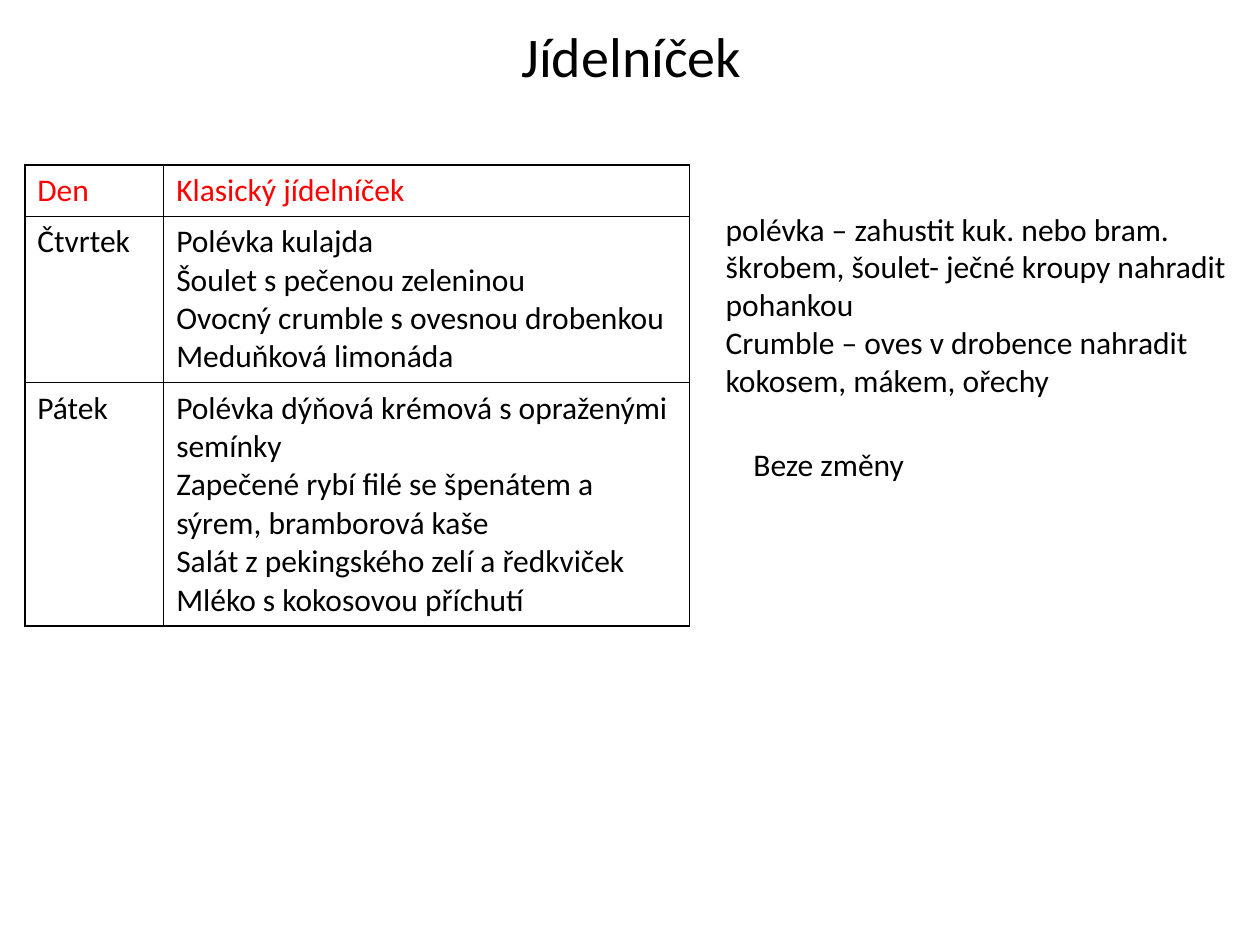
import pptx
import pptx.util
import pptx.dml.color
import pptx.enum.text
import pptx.oxml
import pptx.oxml.ns
from pptx.util import Cm

COLORS = {"text": "000000", "header": "FF0000", "border": "000000"}
MENU = [
    ("Den", "Klasický jídelníček"),
    ("Čtvrtek", "Polévka kulajda\nŠoulet s pečenou zeleninou\n"
                "Ovocný crumble s ovesnou drobenkou\nMeduňková limonáda"),
    ("Pátek", "Polévka dýňová krémová s opraženými semínky\n"
              "Zapečené rybí filé se špenátem a sýrem, bramborová kaše\n"
              "Salát z pekingského zelí a ředkviček\nMléko s kokosovou příchutí"),
]
SOUP_NOTE = ("polévka – zahustit kuk. nebo bram. škrobem, šoulet- ječné kroupy "
             "nahradit pohankou\n"
             "Crumble – oves v drobence nahradit kokosem, mákem, ořechy")


class MenuSlide:
    """Holds the style and the current slide, and adds its elements."""

    def __init__(self, s, font="Calibri", size=18):
        self.s, self.font, self.size = s, font, size

    def style(self, tf, color="text", size=None):
        for p in tf.paragraphs:
            for r in p.runs:
                r.font.name = self.font
                r.font.size = pptx.util.Pt(size or self.size)
                r.font.color.rgb = pptx.dml.color.RGBColor.from_string(COLORS[color])

    def title(self, text, left, top, width, height):
        sp = self.s.shapes.title
        sp.left, sp.top, sp.width, sp.height = left, top, width, height
        tf = sp.text_frame
        tf.text = text
        tf.vertical_anchor = pptx.enum.text.MSO_ANCHOR.MIDDLE
        tf.paragraphs[0].alignment = pptx.enum.text.PP_ALIGN.CENTER
        self.style(tf, size=32)

    def text(self, text, left, top, width, height):
        tf = self.s.shapes.add_textbox(left, top, width, height).text_frame
        tf.word_wrap = True
        tf.auto_size = pptx.enum.text.MSO_AUTO_SIZE.SHAPE_TO_FIT_TEXT
        tf.text = text
        self.style(tf)

    def border(self, cell):
        tcPr = cell._tc.get_or_add_tcPr()
        for i, side in enumerate(("lnL", "lnR", "lnT", "lnB")):
            ln = pptx.oxml.parse_xml(
                f'<a:{side} {pptx.oxml.ns.nsdecls("a")} w="12700"><a:solidFill>'
                f'<a:srgbClr val="{COLORS["border"]}"/></a:solidFill></a:{side}>')
            tcPr.insert(i, ln)

    def table(self, rows, left, top, widths, heights):
        table = self.s.shapes.add_table(
            len(rows), len(widths), left, top, sum(widths), sum(heights)).table
        table.first_row = table.horz_banding = False
        for column, width in zip(table.columns, widths):
            column.width = width
        for i, (row, height) in enumerate(zip(rows, heights)):
            table.rows[i].height = height
            for j, text in enumerate(row):
                cell = table.cell(i, j)
                cell.text_frame.text = text
                cell.fill.background()
                self.style(cell.text_frame, "text" if i else "header")
                self.border(cell)


def main():
    prs = pptx.Presentation()
    prs.slide_width, prs.slide_height = Cm(25.4), Cm(19.05)
    slide = MenuSlide(prs.slides.add_slide(prs.slide_layouts[5]))
    slide.title("Jídelníček", Cm(1.3), Cm(-0.48), Cm(22.86), Cm(3.18))
    slide.table(MENU, Cm(0.5), Cm(3.33), [Cm(2.8), Cm(10.6)],
                [Cm(1.03), Cm(3.35), Cm(4.9)])
    slide.text(SOUP_NOTE, Cm(14.38), Cm(4.1), Cm(11.02), Cm(4.12))
    slide.text("Beze změny", Cm(14.94), Cm(8.84), Cm(9.93), Cm(1.02))
    prs.save("out.pptx")


if __name__ == "__main__":
    main()
